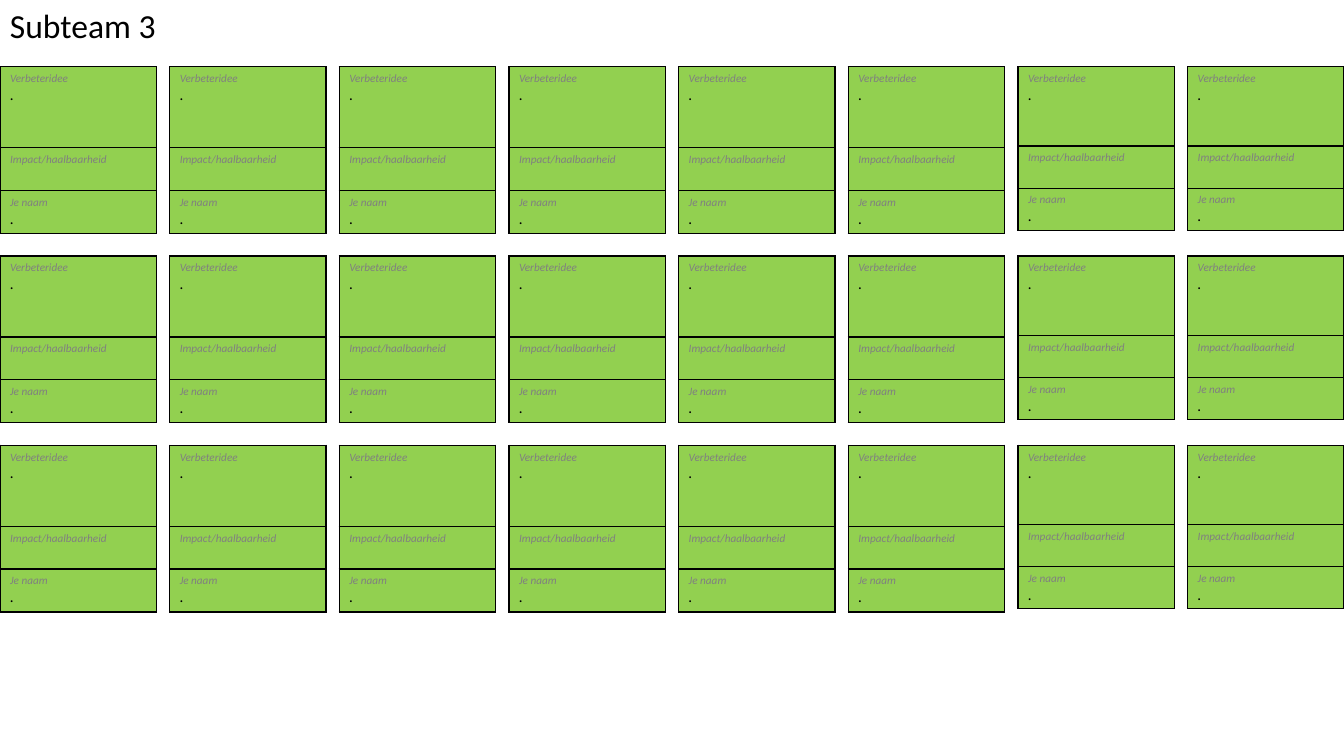
from lxml import etree
from pptx import Presentation
from pptx import util as u
from pptx.dml.color import RGBColor
from pptx.enum import text
from pptx.oxml.ns import qn

COLORS = {"note": "92D050", "label": "808080", "ink": "000000"}
FORMATS = {
    "title": {"size": u.Pt(24)},
    "label": {"size": u.Pt(8), "italic": True},
    "entry": {"size": u.Pt(11), "italic": True},
}
# Each note section: label, followed by its entry if it has one
SECTIONS = [["Verbeteridee", "."], ["Impact/haalbaarheid"], ["Je naam", "."]]


class Board:
    font = "Calibri"

    def __init__(self, prs):
        self.slide = prs.slides.add_slide(prs.slide_layouts[6])

    def add_text(self, p, words, style, color):
        r = p.add_run()
        r.text = words
        for name, value in {"name": self.font, **FORMATS[style]}.items():
            setattr(r.font, name, value)
        r.font.color.rgb = RGBColor.from_string(COLORS[color])

    def title(self, words, x, y, w, h):
        sp = self.slide.shapes.add_textbox(u.Cm(x), u.Cm(y), u.Cm(w), u.Cm(h))
        tf = sp.text_frame
        tf.word_wrap = False
        tf.auto_size = text.MSO_AUTO_SIZE.SHAPE_TO_FIT_TEXT
        self.add_text(tf.paragraphs[0], words, "title", "ink")

    def borders(self, cell):
        tc_pr = cell._tc.get_or_add_tcPr()
        for side in ("a:lnL", "a:lnR", "a:lnT", "a:lnB"):
            ln = etree.SubElement(tc_pr, qn(side), w=str(int(u.Pt(1))))
            fill = etree.SubElement(ln, qn("a:solidFill"))
            etree.SubElement(fill, qn("a:srgbClr"), val=COLORS["ink"])

    def note(self, x, y, w, heights):
        sp = self.slide.shapes.add_table(
            len(SECTIONS), 1, u.Cm(x), u.Cm(y), u.Cm(w), u.Cm(sum(heights)))
        table = sp.table
        table.first_row = table.horz_banding = False
        for i, (lines, height) in enumerate(zip(SECTIONS, heights)):
            table.rows[i].height = u.Cm(height)
            cell = table.cell(i, 0)
            self.borders(cell)
            cell.fill.solid()
            cell.fill.fore_color.rgb = RGBColor.from_string(COLORS["note"])
            tf = cell.text_frame
            self.add_text(tf.paragraphs[0], lines[0], "label", "label")
            for entry in lines[1:]:
                self.add_text(tf.add_paragraph(), entry, "entry", "ink")


def main():
    prs = Presentation()
    prs.slide_width, prs.slide_height = u.Cm(33.87), u.Cm(19.05)
    board = Board(prs)

    # Title
    board.title("Subteam 3", 0, 0, 4.22, 1.27)

    # Grid of notes; the last two columns are slightly shorter
    rows, cols, width, top, pitch_y = 3, 8, 3.94, 1.68, 4.77
    pitch_x = (33.87 - width) / (cols - 1)
    for row in range(rows):
        for col in range(cols):
            heights = (2.04, 1.08, 1.08) if col < 6 else (2, 1.06, 1.06)
            board.note(col * pitch_x, top + row * pitch_y, width, heights)

    prs.save("out.pptx")


if __name__ == "__main__":
    main()
